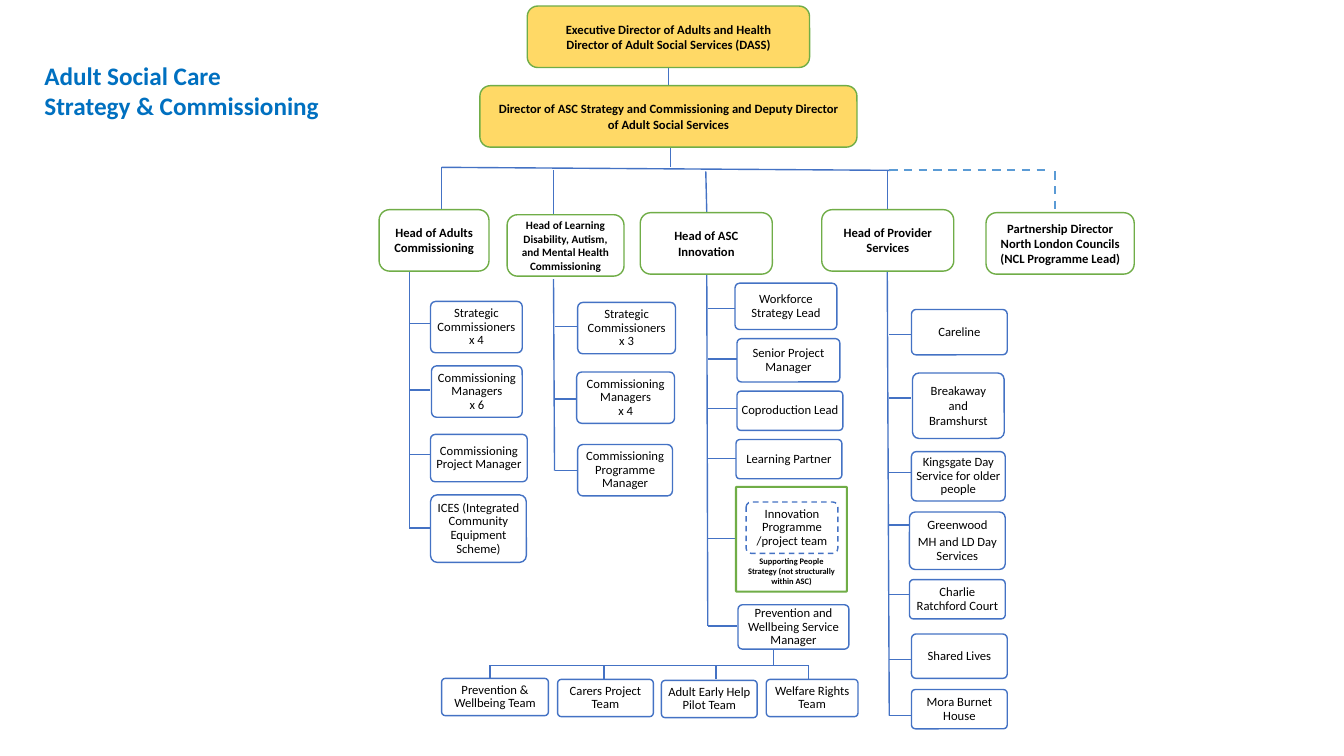
from lxml import etree
from pptx import Presentation
from pptx import util as u
from pptx.dml.color import RGBColor
from pptx.enum import dml, shapes, text
from pptx.oxml import ns

BLUE, GREEN, GOLD, WHITE = "4472C4", "70AD47", "FFD966", "FFFFFF"
BLACK, DASH_BLUE, TITLE_BLUE = "000000", "5B9BD5", "0070C0"


def colour(value):
    return RGBColor.from_string(value)


class OrgChart:
    """Draws the boxes and lines of an organisation chart on one slide."""

    font = "Calibri"

    def __init__(self, slide):
        self.slide = slide

    def add_text(self, frame, lines, size, ink=BLACK, bold=False,
                 align=text.PP_ALIGN.CENTER, spacing=None, after=0):
        frame.word_wrap = True
        for index, line in enumerate(lines):
            paragraph = frame.paragraphs[0] if index == 0 else frame.add_paragraph()
            paragraph.alignment = align
            paragraph.space_before = u.Pt(0)
            paragraph.space_after = u.Pt(after if index < len(lines) - 1 else 0)
            if spacing:
                paragraph.line_spacing = spacing
            for part_index, part in enumerate(line.split("\n")):
                if part_index:
                    paragraph.add_line_break()
                run = paragraph.add_run()
                run.text = part
                run.font.name, run.font.size, run.font.bold = self.font, u.Pt(size), bold
                run.font.color.rgb = colour(ink)

    def title(self, place, lines):
        title = self.slide.shapes.title
        title.left, title.top, title.width, title.height = map(u.Inches, place)
        title.text_frame.vertical_anchor = text.MSO_ANCHOR.TOP
        title.text_frame.auto_size = text.MSO_AUTO_SIZE.NONE
        self.add_text(title.text_frame, lines, 18, TITLE_BLUE, True, text.PP_ALIGN.LEFT, 1.0)

    def box(self, place, fill=WHITE, line=BLUE, width=1, dashed=False, corner=0.1):
        shape = self.slide.shapes.add_shape(
            shapes.MSO_SHAPE.ROUNDED_RECTANGLE, *map(u.Inches, place))
        shape.shadow.inherit = False
        shape.adjustments[0] = corner
        if fill:
            shape.fill.solid()
            shape.fill.fore_color.rgb = colour(fill)
        else:
            shape.fill.background()
        self.stroke(shape.line, line, width, dashed)
        shape.text_frame.vertical_anchor = text.MSO_ANCHOR.MIDDLE
        return shape

    def leader(self, place, lines, fill=WHITE, size=9):
        shape = self.box(place, fill, GREEN, corner=0.17)
        self.add_text(shape.text_frame, lines, size, bold=True)

    def team(self, place, lines, spacing=0.9, dashed=False):
        frame = self.box(place, dashed=dashed).text_frame
        frame.margin_left = frame.margin_right = u.Inches(0.01)
        frame.margin_top = frame.margin_bottom = u.Inches(0.01)
        self.add_text(frame, lines, 9, spacing=spacing, after=3 if spacing < 1 else 0)

    def framed_note(self, place, lines):
        shape = self.box(place, None, GREEN, 1.5, corner=0.01)
        shape.text_frame.vertical_anchor = text.MSO_ANCHOR.BOTTOM
        self.add_text(shape.text_frame, lines, 6, bold=True)

    def stroke(self, line, value, width, dashed):
        line.color.rgb = colour(value)
        line.width = u.Pt(width)
        if dashed:
            line.dash_style = dml.MSO_LINE.DASH

    def line(self, x1, y1, x2, y2, value=BLUE, width=1, dashed=False):
        connector = self.slide.shapes.add_connector(
            shapes.MSO_CONNECTOR.STRAIGHT, *map(u.Inches, (x1, y1, x2, y2)))
        self.stroke(connector.line, value, width, dashed)
        properties = connector._element.find(ns.qn("p:spPr"))
        etree.SubElement(properties, ns.qn("a:effectLst"))

    def branch(self, top_x, bottom_x, top, box_left, heights):
        self.line(top_x, top, bottom_x, heights[-1])
        for height in heights:
            self.line(bottom_x, height, box_left, height)


DIRECTORS = [
    ((5.23, 0.06, 2.8, 0.61), ["Executive Director of Adults and Health",
                               "Director of Adult Social Services (DASS)"]),
    ((4.76, 0.85, 3.74, 0.61), ["Director of ASC Strategy and Commissioning and "
                                "Deputy Director of Adult Social Services"]),
]
HEADS = [
    ((3.76, 2.08, 1.09, 0.61), ["Head of Adults Commissioning"], 9),
    ((5.03, 2.13, 1.16, 0.61), ["Head of Learning Disability, Autism, and "
                                "Mental Health Commissioning"], 8),
    ((6.35, 2.11, 1.31, 0.61), ["Head of ASC Innovation"], 9),
    ((8.15, 2.08, 1.31, 0.61), ["Head of Provider Services"], 9),
    ((9.78, 2.11, 1.47, 0.61), ["Partnership Director North London Councils",
                                "(NCL Programme Lead)"], 9),
]
TEAMS = [
    ((4.27, 2.99, 0.91, 0.51), ["Strategic Commissioners\nx 4"]),
    ((4.28, 3.63, 0.9, 0.51), ["Commissioning Managers\nx 6"]),
    ((4.27, 4.31, 0.96, 0.47), ["Commissioning Project Manager"]),
    ((4.27, 4.91, 0.95, 0.67), ["ICES (Integrated Community Equipment Scheme)"]),
    ((5.73, 3, 0.97, 0.51), ["Strategic Commissioners\nx 3"]),
    ((5.72, 3.69, 0.97, 0.51), ["Commissioning Managers\nx 4"]),
    ((5.73, 4.41, 0.94, 0.51), ["Commissioning Programme Manager"]),
    ((7.29, 2.81, 1.01, 0.46), ["Workforce\nStrategy Lead"]),
    ((7.31, 3.36, 1.02, 0.43), ["Senior Project Manager"]),
    ((7.31, 3.88, 1.05, 0.39), ["Coproduction Lead"]),
    ((7.3, 4.36, 1.05, 0.39), ["Learning Partner"]),
    ((7.32, 6, 1.1, 0.44), ["Prevention and Wellbeing Service Manager"]),
    ((4.38, 6.73, 1.06, 0.37), ["Prevention & Wellbeing Team"]),
    ((5.53, 6.74, 0.95, 0.37), ["Carers Project Team"]),
    ((6.56, 6.75, 0.95, 0.37), ["Adult Early Help Pilot Team"]),
    ((7.6, 6.74, 0.91, 0.37), ["Welfare Rights Team"]),
    ((9.04, 3.07, 0.95, 0.45), ["Careline"]),
    ((9.04, 4.48, 0.93, 0.49), ["Kingsgate Day Service for older people"]),
    ((9.02, 5.08, 0.95, 0.57), ["Greenwood", "MH and LD Day Services"]),
    ((9.02, 5.75, 0.95, 0.39), ["Charlie\nRatchford Court"]),
    ((9.04, 6.29, 0.95, 0.44), ["Shared Lives"]),
    ((9.04, 6.84, 0.95, 0.39), ["Mora Burnet House"]),
]
BRANCHES = [
    (4.06, 4.06, 2.7, 4.27, [3.21, 3.87, 4.51, 5.24]),
    (5.49, 5.5, 2.77, 5.73, [3.24, 3.96, 4.67]),
    (7.01, 7.02, 2.73, 7.31, [3.06, 3.56, 4.05, 4.55, 5.34, 6.21]),
    (8.8, 8.82, 2.7, 9.04, [3.32, 3.95, 4.69, 5.21, 5.9, 6.54, 7.1]),
]
LINKS = [
    (6.63, 0.67, 6.63, 0.85), (6.65, 1.47, 6.65, 1.66), (4.38, 1.66, 8.83, 1.69),
    (4.38, 1.66, 4.38, 2.08), (5.49, 1.69, 5.49, 2.12), (7, 1.7, 7.01, 2.11),
    (8.8, 1.7, 8.8, 2.11), (7.67, 6.44, 7.67, 6.6), (4.86, 6.6, 8.02, 6.6),
]
DASHED_LINKS = [(8.82, 1.69, 10.39, 1.69), (10.46, 1.7, 10.46, 2.11)]


def main():
    presentation = Presentation()
    presentation.slide_width, presentation.slide_height = u.Inches(13.33), u.Inches(7.5)
    chart = OrgChart(presentation.slides.add_slide(presentation.slide_layouts[5]))
    chart.title((0.34, 0.55, 3.23, 1.01), ["Adult Social Care", "Strategy & Commissioning"])
    for link in LINKS:
        chart.line(*link)
    for link in DASHED_LINKS:
        chart.line(*link, DASH_BLUE, 1.5, True)
    for x in (4.86, 5.99, 7.1, 8.02):
        chart.line(x, 6.6, x, 6.74)
    for branch in BRANCHES:
        chart.branch(*branch)
    for place, lines in DIRECTORS:
        chart.leader(place, lines, GOLD)
    for place, lines, size in HEADS:
        chart.leader(place, lines, size=size)
    for place, lines in TEAMS:
        chart.team(place, lines)
    chart.team((9.05, 3.7, 0.91, 0.65), ["Breakaway", "and", "Bramshurst"], spacing=1.0)
    chart.framed_note((7.3, 4.83, 1.1, 1.04),
                      ["Supporting People Strategy (not structurally within ASC)"])
    chart.team((7.4, 4.98, 0.91, 0.51), ["Innovation Programme /project team"], dashed=True)
    presentation.save("out.pptx")


if __name__ == "__main__":
    main()
